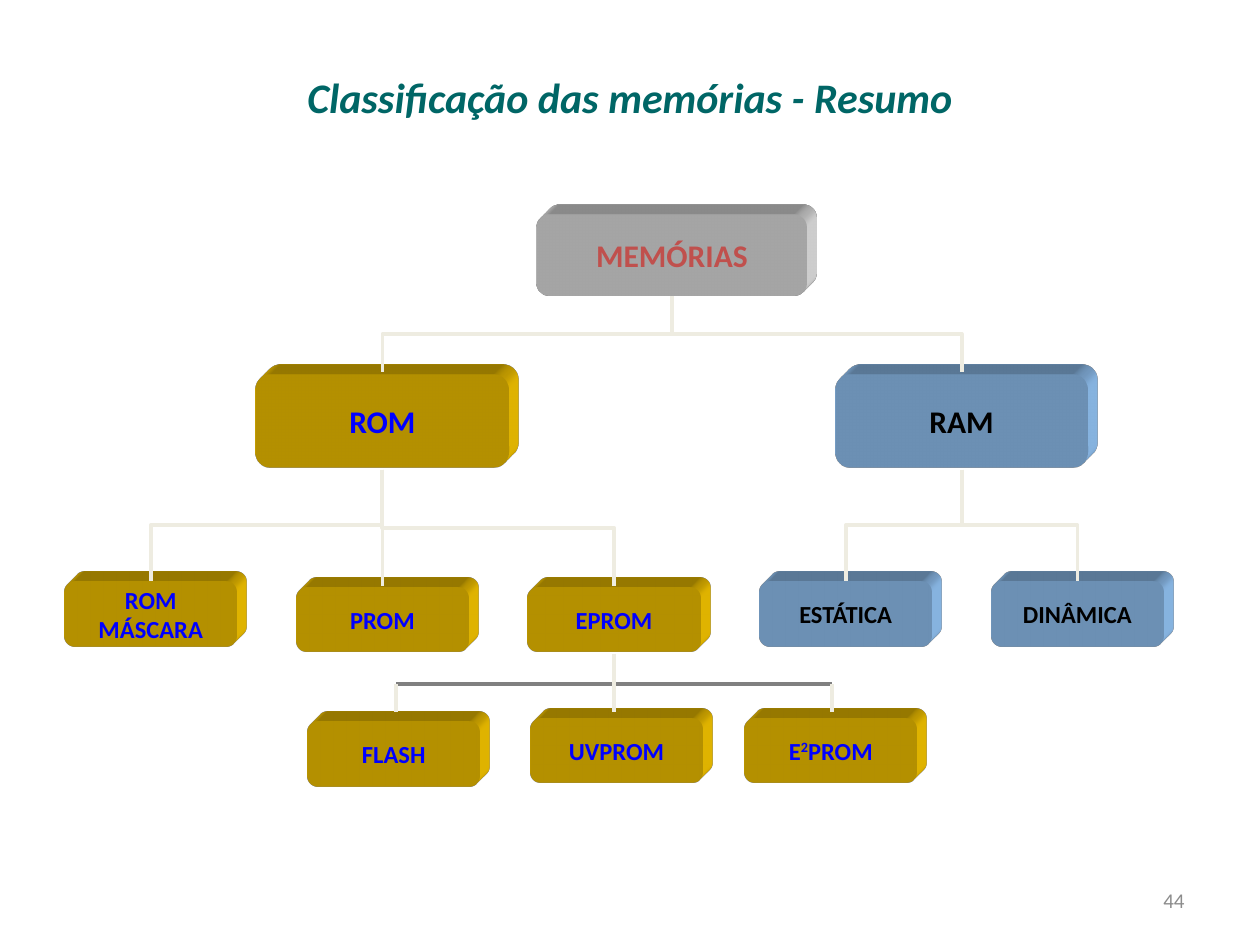
import pptx
import pptx.dml.color
import pptx.enum.shapes
import pptx.enum.text
import pptx.oxml
import pptx.oxml.ns
import pptx.util

Cm = pptx.util.Cm
Pt = pptx.util.Pt
RGB = pptx.dml.color.RGBColor.from_string
Shape = pptx.enum.shapes.MSO_SHAPE
Connector = pptx.enum.shapes.MSO_CONNECTOR
Align = pptx.enum.text.PP_ALIGN

theme = {
    "font": "Calibri",
    "title": "006666", "number": "8C8C8C",
    "branch": "EEECE1", "bar": "808080",
    "root": ("EAEAEA", "C0504D"),
    "rom": ("FFCC00", "0000FF"),
    "ram": ("99CCFF", "000000"),
    "title_size": 24, "major_size": 18, "leaf_size": 14, "number_size": 12,
}

EXTRUSION = (
    '<a:scene3d {ns}><a:camera prst="legacyObliqueTopRight"/>'
    '<a:lightRig rig="legacyFlat3" dir="b"/></a:scene3d>',
    '<a:sp3d {ns} extrusionH="201600" prstMaterial="legacyMatte">'
    '<a:bevelT w="13500" h="13500" prst="angle"/><a:bevelB w="13500" h="13500" prst="angle"/>'
    '<a:extrusionClr><a:srgbClr val="{color}"/></a:extrusionClr></a:sp3d>',
)
NS = pptx.oxml.ns.nsdecls("a")


def write(sp, text, size, color, bold=False, italic=False, align=Align.CENTER, inset=0):
    tf = sp.text_frame
    tf.word_wrap = True
    tf.vertical_anchor = pptx.enum.text.MSO_ANCHOR.MIDDLE
    tf.margin_left = tf.margin_right = Cm(inset)
    tf.margin_top = tf.margin_bottom = 0
    for i, line in enumerate(text.split("\n")):
        p = tf.add_paragraph() if i else tf.paragraphs[0]
        p.alignment = align
        for j, part in enumerate(line.split("^")):
            r = p.add_run()
            r.text = part
            r.font.name = theme["font"]
            r.font.size = Pt(size)
            r.font.bold = bold
            r.font.italic = italic
            r.font.color.rgb = RGB(color)
            if j % 2:
                r.font._element.set("baseline", "30000")


def connect(x1, y1, x2, y2, color=theme["branch"]):
    if x1 == x2 or y1 == y2:
        c = s.shapes.add_connector(Connector.STRAIGHT, Cm(x1), Cm(y1), Cm(x2), Cm(y2))
    else:
        mx, my = (x1 + x2) / 2, (y1 + y2) / 2
        w, h = (y2 - y1) / 2, abs(x2 - x1) / 2
        c = s.shapes.add_connector(Connector.ELBOW, Cm(mx - w), Cm(my - h), Cm(mx + w), Cm(my + h))
        xfrm = c._element.spPr.xfrm
        xfrm.set("rot", "5400000" if x2 < x1 else "16200000")
        if x2 > x1:
            xfrm.set("flipH", "1")
    c.line.color.rgb = RGB(color)
    c.line.width = Pt(2.25)
    c._element.spPr.append(pptx.oxml.parse_xml(f"<a:effectLst {NS}/>"))


prs = pptx.Presentation()
prs.slide_width, prs.slide_height = Cm(25.4), Cm(19.05)
s = prs.slides.add_slide(prs.slide_layouts[6])

sp = s.shapes.add_textbox(Cm(18.2), Cm(17.65), Cm(5.93), Cm(1.01))
write(sp, "44", theme["number_size"], theme["number"], align=Align.RIGHT, inset=0.25)
sp = s.shapes.add_textbox(Cm(1.27), Cm(0.76), Cm(22.86), Cm(2.36))
write(sp, "Classificação das memórias - Resumo", theme["title_size"], theme["title"],
      bold=True, italic=True)

columns = [3.04 + 4.67 * i for i in range(5)]
rom_x, eprom_x = columns[1], columns[2]
ram_x = (columns[3] + columns[4]) / 2
root_x = (rom_x + ram_x) / 2

root_size, major_size, leaf_size = (5.44, 1.63), (5.1, 1.88), (3.48, 1.3)
nodes = [
    ("MEMÓRIAS", root_x, 4.32, root_size, "root"),
    ("ROM", rom_x, 7.54, major_size, "rom"),
    ("RAM", ram_x, 7.54, major_size, "ram"),
    ("ROM\nMÁSCARA", columns[0], 11.73, leaf_size, "rom"),
    ("PROM", rom_x, 11.84, leaf_size, "rom"),
    ("EPROM", eprom_x, 11.84, leaf_size, "rom"),
    ("ESTÁTICA", columns[3], 11.73, leaf_size, "ram"),
    ("DINÂMICA", columns[4], 11.73, leaf_size, "ram"),
    ("FLASH", 7.94, 14.55, leaf_size, "rom"),
    ("UVPROM", 12.43, 14.48, leaf_size, "rom"),
    ("E^2^PROM", 16.75, 14.48, leaf_size, "rom"),
]
for text, x, top, (w, h), family in nodes:
    fill, ink = theme[family]
    sp = s.shapes.add_shape(Shape.ROUNDED_RECTANGLE, Cm(x - w / 2), Cm(top), Cm(w), Cm(h))
    sp.shadow.inherit = False
    sp.fill.solid()
    sp.fill.fore_color.rgb = RGB(fill)
    sp.line.fill.background()
    for xml in EXTRUSION:
        sp._element.spPr.append(pptx.oxml.parse_xml(xml.format(ns=NS, color=fill)))
    size = theme["leaf_size" if w == leaf_size[0] else "major_size"]
    write(sp, text, size, ink, bold=True)

for x in (rom_x, ram_x):
    connect(root_x, 5.97, x, 7.5)
for parent_x, x, bottom in [
    (rom_x, columns[0], 11.71), (rom_x, rom_x, 11.81), (rom_x, eprom_x, 11.81),
    (ram_x, columns[4], 11.71), (ram_x, columns[3], 11.71),
]:
    connect(parent_x, 9.47, x, bottom)

bar_y, half_bar = 13.79, 4.39
connect(eprom_x + half_bar, bar_y, eprom_x - half_bar, bar_y, theme["bar"])
for x, top in [(eprom_x - half_bar, bar_y), (eprom_x, 13.18), (eprom_x + half_bar, bar_y)]:
    connect(x, top, x, 14.35)

prs.save("out.pptx")
